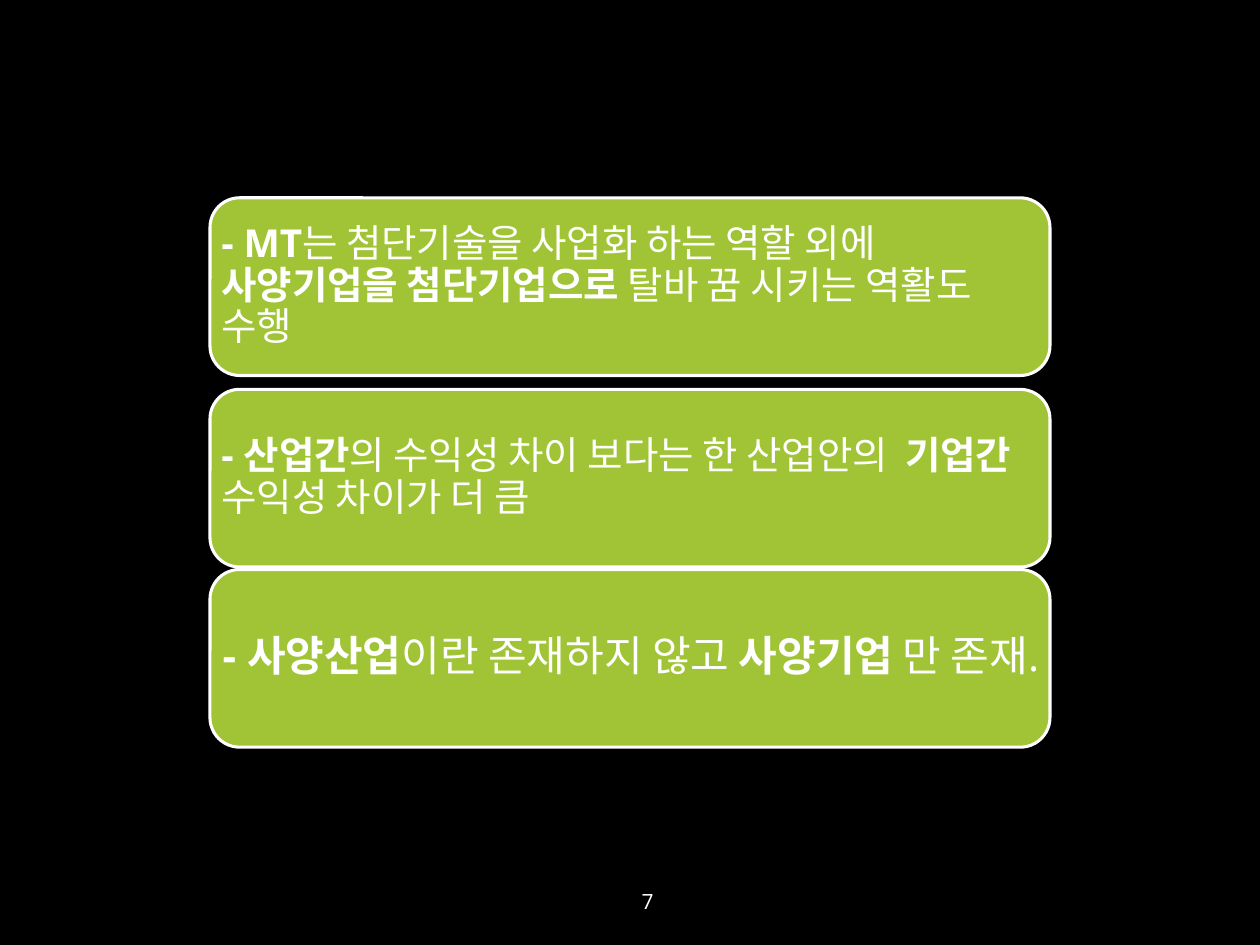
"""Build a dark slide with three stacked green statement cards and a page number."""
import pptx
import pptx.util
import pptx.dml.color
import pptx.enum.shapes
import pptx.enum.text

INK = {"back": "000000", "card": "A0C435", "text": "FFFFFF"}
FONT = "Open Sans"
WIDE, HIGH = 10, 7.5
CARD = {"left": WIDE / 6, "width": WIDE * 2 / 3, "height": 1.41}
ROUND = 0.1667
CARDS = [
    (1.57, 22, 0.09, [("- MT", True), ("는 첨단기술을 사업화 하는 역할 외에 ", False),
                      ("사양기업을 첨단기업으로 ", True), ("탈바 꿈 시키는 역활도 수행", False)]),
    (3.09, 22, 0.09, [("- 산업간", True), ("의 수익성 차이 보다는 한 산업안의 ", False),
                      (" 기업간 ", True), ("수익성 차이가 더 큼", False)]),
    (4.52, 24, 0.1, [("- 사양산업", True), ("이란 존재하지 않고 ", False),
                     ("사양기업", True), (" 만 존재.", False)]),
]
PAGE = ("7", 12, (4.53, 6.95, 1.22, 0.4))

inch = pptx.util.Inches
align = pptx.enum.text.PP_ALIGN


def tint(name):
    return pptx.dml.color.RGBColor.from_string(INK[name])


def write(shape, runs, size, side):
    frame = shape.text_frame
    frame.word_wrap = True
    frame.vertical_anchor = pptx.enum.text.MSO_ANCHOR.MIDDLE
    line = frame.paragraphs[0]
    line.alignment = side
    line.font.name = FONT
    line.font.size = pptx.util.Pt(size)
    line.font.color.rgb = tint("text")
    for text, bold in runs:
        run = line.add_run()
        run.text = text
        run.font.bold = bold
    return frame, line


def add_card(slide, top, size, pad, runs):
    card = slide.shapes.add_shape(
        pptx.enum.shapes.MSO_SHAPE.ROUNDED_RECTANGLE,
        inch(CARD["left"]), inch(top), inch(CARD["width"]), inch(CARD["height"]))
    card.adjustments[0] = ROUND
    card.shadow.inherit = False
    card.fill.solid()
    card.fill.fore_color.rgb = tint("card")
    card.line.color.rgb = tint("text")
    card.line.width = pptx.util.Pt(1.75)
    frame, line = write(card, runs, size, align.LEFT)
    line.line_spacing = 0.9
    inset = inch(pad - 0.29 * ROUND * CARD["height"])
    frame.margin_left = frame.margin_right = inset
    frame.margin_top = frame.margin_bottom = inset


def main():
    deck = pptx.Presentation()
    deck.slide_width, deck.slide_height = inch(WIDE), inch(HIGH)
    slide = deck.slides.add_slide(deck.slide_layouts[6])
    slide.background.fill.solid()
    slide.background.fill.fore_color.rgb = tint("back")
    for top, size, pad, runs in CARDS:
        add_card(slide, top, size, pad, runs)
    text, size, place = PAGE
    box = slide.shapes.add_textbox(*map(inch, place))
    write(box, [(text, False)], size, align.CENTER)
    deck.save("out.pptx")


if __name__ == "__main__":
    main()
